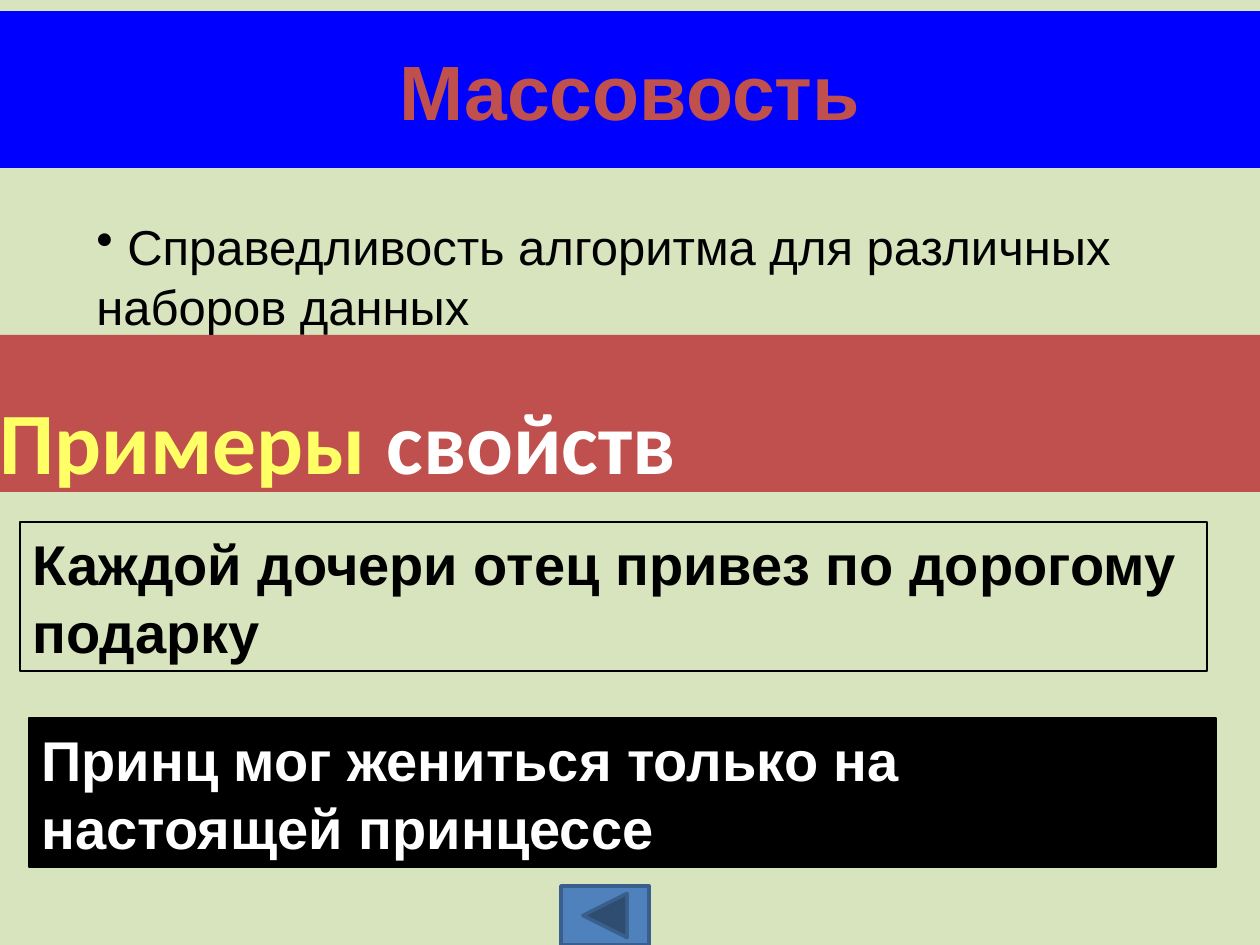
import pptx
import pptx.dml.color
import pptx.enum.shapes
import pptx.enum.text
import pptx.util
from lxml import etree

PX_PER_INCH = 126
WIDTH, HEIGHT = 1260, 945
BAND_HEIGHT = 157
COLOURS = {
    "background": "D7E4BD",
    "title band": "0000FF",
    "red": "C0504D",
    "yellow": "FFFF66",
    "white": "FFFFFF",
    "black": "000000",
    "button": "4F81BD",
    "button line": "3A5F8C",
}
SHAPES = pptx.enum.shapes.MSO_SHAPE
ANCHOR = pptx.enum.text.MSO_ANCHOR
ALIGN = pptx.enum.text.PP_ALIGN


def px(length):
    return pptx.util.Emu(round(length * 914400 / PX_PER_INCH))


def colour(name):
    return pptx.dml.color.RGBColor.from_string(COLOURS[name])


def paint(shape, fill=None, line=None, line_width=1):
    if fill:
        shape.fill.solid()
        shape.fill.fore_color.rgb = colour(fill)
    else:
        shape.fill.background()
    if line:
        shape.line.color.rgb = colour(line)
        shape.line.width = pptx.util.Pt(line_width)
    else:
        shape.line.fill.background()


def add_preset(slide, kind, box, **style):
    shape = slide.shapes.add_shape(kind, *map(px, box))
    shape.shadow.inherit = False
    paint(shape, **style)
    return shape


def format_run(run, size, colour_name, font="Arial", bold=True):
    run.font.size = pptx.util.Pt(size)
    run.font.name = font
    run.font.bold = bold
    run.font.color.rgb = colour(colour_name)


def add_band(slide, top, fill):
    """Add a full-width band and return its text frame."""
    band = add_preset(slide, SHAPES.RECTANGLE, (0, top, WIDTH, BAND_HEIGHT), fill=fill)
    return band.text_frame


def add_title(slide, text):
    frame = add_band(slide, 11, "title band")
    frame.text = text
    frame.vertical_anchor = ANCHOR.MIDDLE
    frame.paragraphs[0].alignment = ALIGN.CENTER
    format_run(frame.paragraphs[0].runs[0], 44, "red")


def add_heading(slide, parts):
    """Add the red band with a heading of (text, colour) parts."""
    frame = add_band(slide, 335, "red")
    frame.vertical_anchor = ANCHOR.BOTTOM
    frame.margin_left = frame.margin_right = frame.margin_bottom = 0
    paragraph = frame.paragraphs[0]
    paragraph.alignment = ALIGN.LEFT
    for text, colour_name in parts:
        run = paragraph.add_run()
        run.text = text
        format_run(run, 50, colour_name, font="Calibri")


def add_text(slide, box, text, size, colour_name, bold=True, bullet=None, **style):
    text_box = slide.shapes.add_textbox(*map(px, box))
    paint(text_box, **style)
    frame = text_box.text_frame
    frame.word_wrap = True
    frame.text = text
    paragraph = frame.paragraphs[0]
    paragraph.line_spacing = pptx.util.Pt(round(size * 1.22))
    if bullet:
        properties = paragraph._p.get_or_add_pPr()
        mark = etree.SubElement(properties, pptx.oxml.ns.qn("a:buChar"))
        mark.set("char", bullet)
    format_run(paragraph.runs[0], size, colour_name, bold=bold)


def main():
    presentation = pptx.Presentation()
    presentation.slide_width, presentation.slide_height = px(WIDTH), px(HEIGHT)
    slide = presentation.slides.add_slide(presentation.slide_layouts[6])
    slide.background.fill.solid()
    slide.background.fill.fore_color.rgb = colour("background")

    add_title(slide, "Массовость")
    add_text(slide, (84, 210, 1071, 244),
             " Справедливость алгоритма для различных наборов данных",
             28, "black", bold=False, bullet="•")
    add_heading(slide, [("Примеры ", "yellow"), ("свойств", "white")])
    add_text(slide, (20, 522, 1187, 149),
             "Каждой дочери отец привез по дорогому подарку",
             32, "black", line="black")
    add_text(slide, (29, 718, 1187, 149),
             "Принц мог жениться только на настоящей принцессе",
             32, "white", fill="black", line="black")
    add_preset(slide, SHAPES.ACTION_BUTTON_BACK_OR_PREVIOUS, (561, 886, 88, 59),
               fill="button", line="button line", line_width=2)
    presentation.save("out.pptx")


if __name__ == "__main__":
    main()
